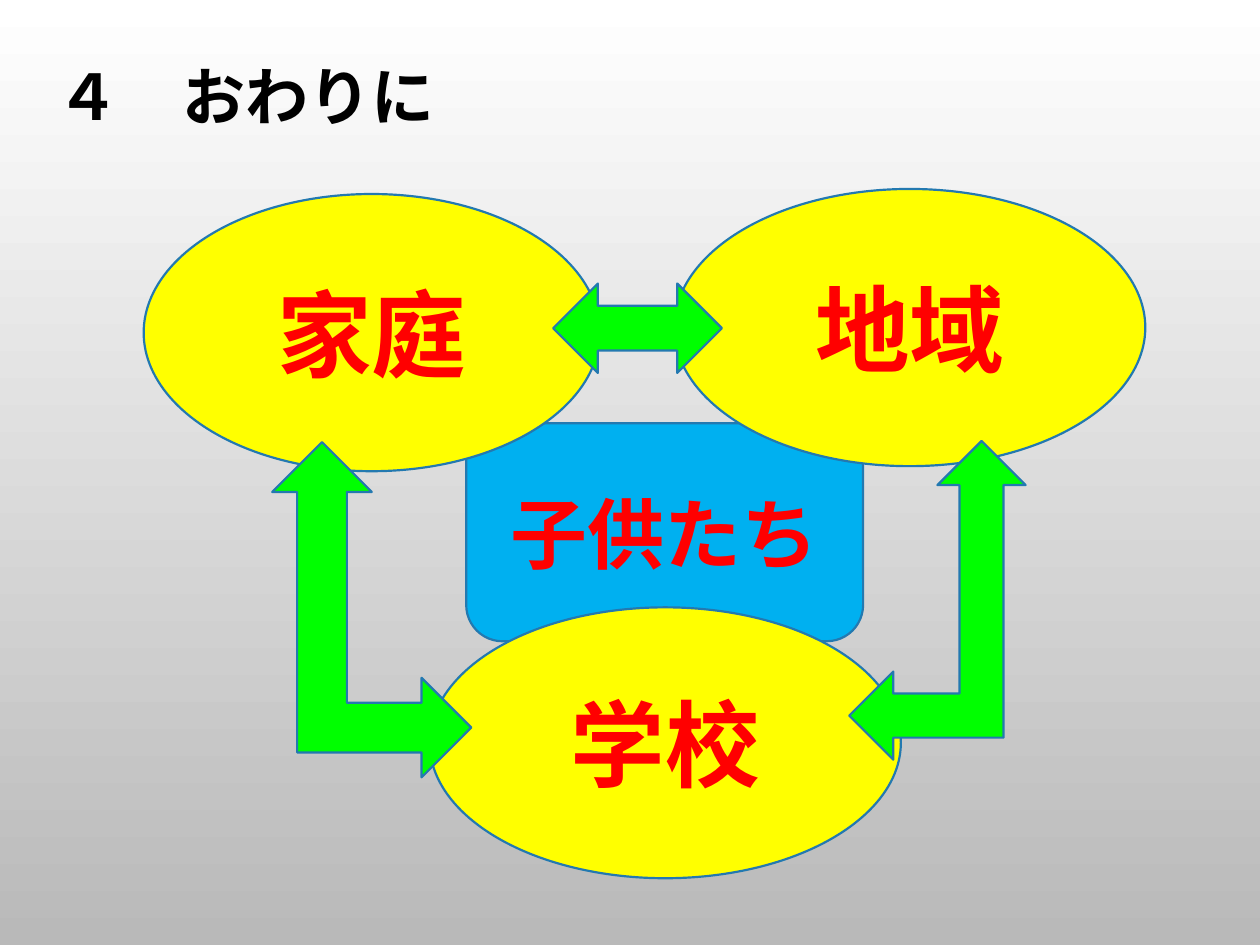
from dataclasses import dataclass

from pptx import Presentation
from pptx import util as u
from pptx.dml.color import RGBColor
from pptx.enum import shapes, text

SHAPE = shapes.MSO_SHAPE


@dataclass(frozen=True)
class Theme:
    font: str = "Cabin"
    title: str = "000000"
    label: str = "FF0000"
    group: str = "FFFF00"
    children: str = "00B0F0"
    arrow: str = "00FF00"
    outline: str = "2379B0"
    bg: tuple = ("FFFFFF", "B9B9B9")
    title_size: int = 36
    children_size: int = 44
    group_size: int = 54
    line: float = 1.25


@dataclass(frozen=True)
class Grid:
    left: float
    top: float
    width: float
    height: float
    cols: int
    rows: int

    def place(self, col, row, cols, rows):
        dx, dy = self.width / self.cols, self.height / self.rows
        return [u.Inches(v) for v in (self.left + col * dx, self.top + row * dy,
                                      cols * dx, rows * dy)]


T = Theme()


def rgb(value):
    return RGBColor.from_string(value)


def add_run(p, words, size, color):
    r = p.add_run()
    r.text = words
    r.font.name = T.font
    r.font.size = u.Pt(size)
    r.font.bold = True
    r.font.color.rgb = rgb(color)


def add_block(s, kind, place, fill, words="", size=0):
    sp = s.shapes.add_shape(kind, *place)
    sp.shadow.inherit = False
    sp.fill.solid()
    sp.fill.fore_color.rgb = rgb(fill)
    sp.line.color.rgb = rgb(T.outline)
    sp.line.width = u.Pt(T.line)
    if words:
        tf = sp.text_frame
        tf.vertical_anchor = text.MSO_ANCHOR.MIDDLE
        p = tf.paragraphs[0]
        p.alignment = text.PP_ALIGN.CENTER
        add_run(p, words, size, T.label)
    return sp


def add_background(s):
    fill = s.background.fill
    fill.gradient()
    fill.gradient_angle = 270
    for stop, color, position in zip(fill.gradient_stops, T.bg, (0, 1)):
        stop.color.rgb = rgb(color)
        stop.position = position


def add_title(s, box):
    sp = s.shapes.title
    sp.left, sp.top, sp.width, sp.height = box
    tf = sp.text_frame
    tf.word_wrap = True
    tf.auto_size = text.MSO_AUTO_SIZE.SHAPE_TO_FIT_TEXT
    tf.vertical_anchor = text.MSO_ANCHOR.TOP
    p = tf.paragraphs[0]
    p.alignment = text.PP_ALIGN.LEFT
    add_run(p, "４　おわりに", T.title_size, T.title)


def add_diagram(s, grid):
    add_block(s, SHAPE.ROUNDED_RECTANGLE, grid.place(26, 18.6, 31.5, 17.3),
              T.children, "子供たち", T.children_size)

    groups = [
        ("地域", (42.5, 0, 37.4, 22)),
        ("家庭", (0.4, 0.4, 36.2, 22)),
        ("学校", (23.1, 33.2, 37.4, 21.5)),
    ]
    for words, cells in groups:
        add_block(s, SHAPE.OVAL, grid.place(*cells), T.group, words, T.group_size)

    arrows = [
        (SHAPE.LEFT_UP_ARROW, (56.4, 20, 14, 25.3), 0),
        (SHAPE.LEFT_UP_ARROW, (5.2, 25.5, 26.6, 15.8), 90),
        (SHAPE.LEFT_RIGHT_ARROW, (32.9, 7.5, 13.4, 7.1), 0),
    ]
    for kind, cells, angle in arrows:
        add_block(s, kind, grid.place(*cells), T.arrow).rotation = angle


def main():
    prs = Presentation()
    prs.slide_width, prs.slide_height = u.Inches(10), u.Inches(7.5)
    s = prs.slides.add_slide(prs.slide_layouts[5])
    page = Grid(0, 0, 10, 7.5, 100, 75)
    add_background(s)
    add_title(s, page.place(3.5, 4.1, 36.2, 7.1))
    add_diagram(s, Grid(1.1, 1.5, 8, 5.5, 80, 55))
    prs.save("out.pptx")


if __name__ == "__main__":
    main()
